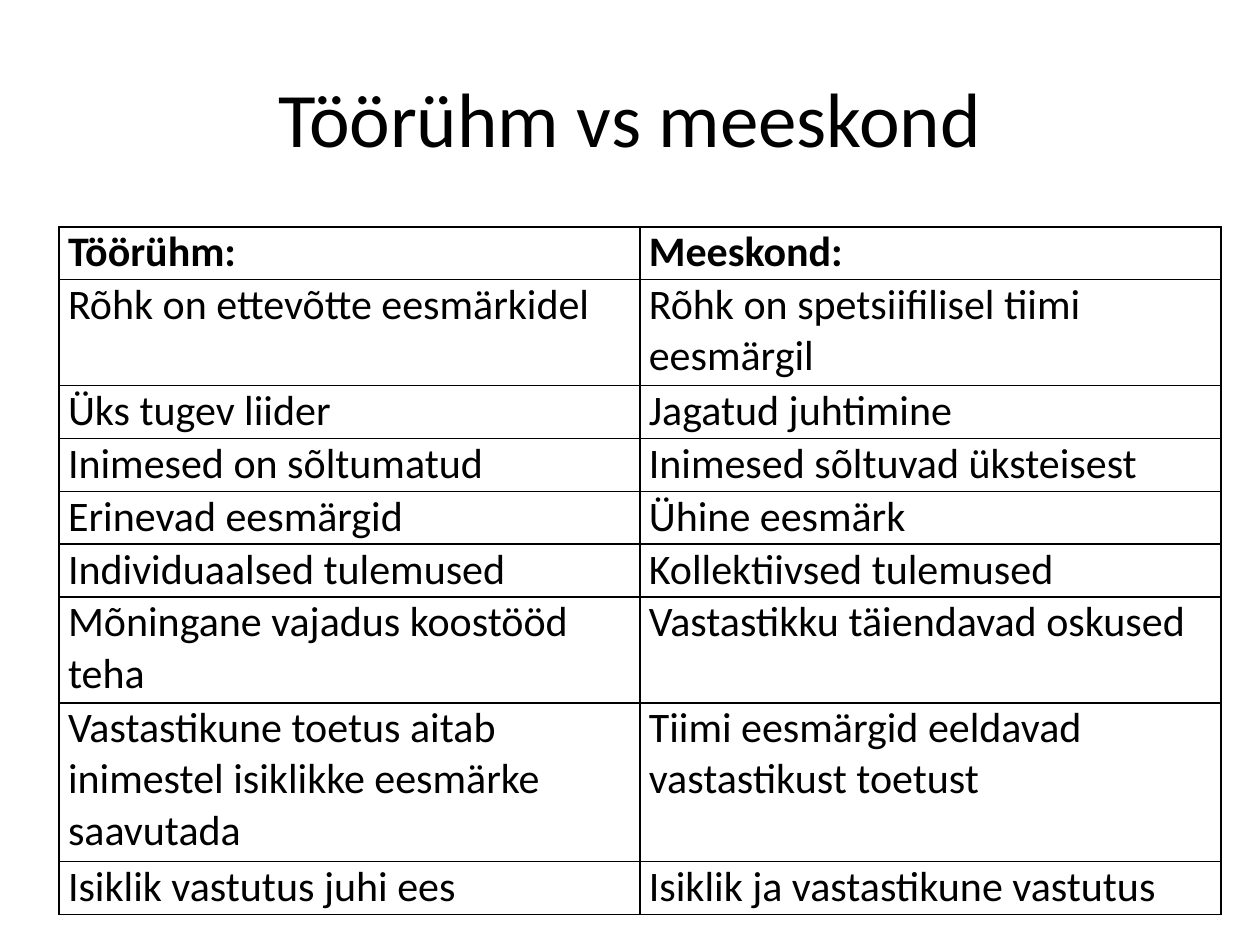
from lxml import etree
from pptx import Presentation
from pptx.dml.color import RGBColor
from pptx.enum.text import MSO_ANCHOR, PP_ALIGN
from pptx.oxml.ns import qn
from pptx.util import Inches, Pt

BLACK = "000000"
LINE_H = 0.42  # height of one text line in the table

# Left text, right text, number of lines in the row
ROWS = [
    ("Töörühm:", "Meeskond:", 1),
    ("Rõhk on ettevõtte eesmärkidel", "Rõhk on spetsiifilisel tiimi eesmärgil", 2),
    ("Üks tugev liider", "Jagatud juhtimine", 1),
    ("Inimesed on sõltumatud", "Inimesed sõltuvad üksteisest", 1),
    ("Erinevad eesmärgid", "Ühine eesmärk", 1),
    ("Individuaalsed tulemused", "Kollektiivsed tulemused", 1),
    ("Mõningane vajadus koostööd teha", "Vastastikku täiendavad oskused", 2),
    ("Vastastikune toetus aitab inimestel isiklikke eesmärke saavutada",
     "Tiimi eesmärgid eeldavad vastastikust toetust", 3),
    ("Isiklik vastutus juhi ees", "Isiklik ja vastastikune vastutus", 1),
]


def add_run(p, text, size, color, bold=False):
    r = p.add_run()
    r.text = text
    r.font.name = "Calibri"
    r.font.size = Pt(size)
    r.font.bold = bold
    r.font.color.rgb = RGBColor.from_string(color)


def set_borders(cell, color, width):
    tc_pr = cell._tc.get_or_add_tcPr()
    for i, side in enumerate(("a:lnL", "a:lnR", "a:lnT", "a:lnB")):
        ln = etree.Element(qn(side), w=str(Pt(width)))
        fill = etree.SubElement(ln, qn("a:solidFill"))
        etree.SubElement(fill, qn("a:srgbClr"), val=color)
        tc_pr.insert(i, ln)  # borders come before the fill


prs = Presentation()
prs.slide_width, prs.slide_height = Inches(10), Inches(7.5)
s = prs.slides.add_slide(prs.slide_layouts[6])

# Title
sp = s.shapes.add_textbox(Inches(0.5), Inches(0.3), Inches(9), Inches(1.25))
tf = sp.text_frame
tf.word_wrap = True
tf.vertical_anchor = MSO_ANCHOR.MIDDLE
p = tf.paragraphs[0]
p.alignment = PP_ALIGN.CENTER
add_run(p, "Töörühm vs meeskond", 44, BLACK)

# Comparison table
total = sum(lines for *_, lines in ROWS)
table = s.shapes.add_table(len(ROWS), 2, Inches(0.47), Inches(1.8),
                           Inches(9.22), Inches(LINE_H * total)).table
table.first_row = table.horz_banding = False
for i, (left, right, lines) in enumerate(ROWS):
    table.rows[i].height = Inches(LINE_H * lines)
    for j, text in enumerate((left, right)):
        cell = table.cell(i, j)
        cell.margin_left = cell.margin_right = Inches(0.07)
        cell.margin_top = cell.margin_bottom = 0
        cell.fill.background()
        set_borders(cell, BLACK, 1)
        add_run(cell.text_frame.paragraphs[0], text, 24, BLACK, bold=i == 0)

prs.save("out.pptx")
